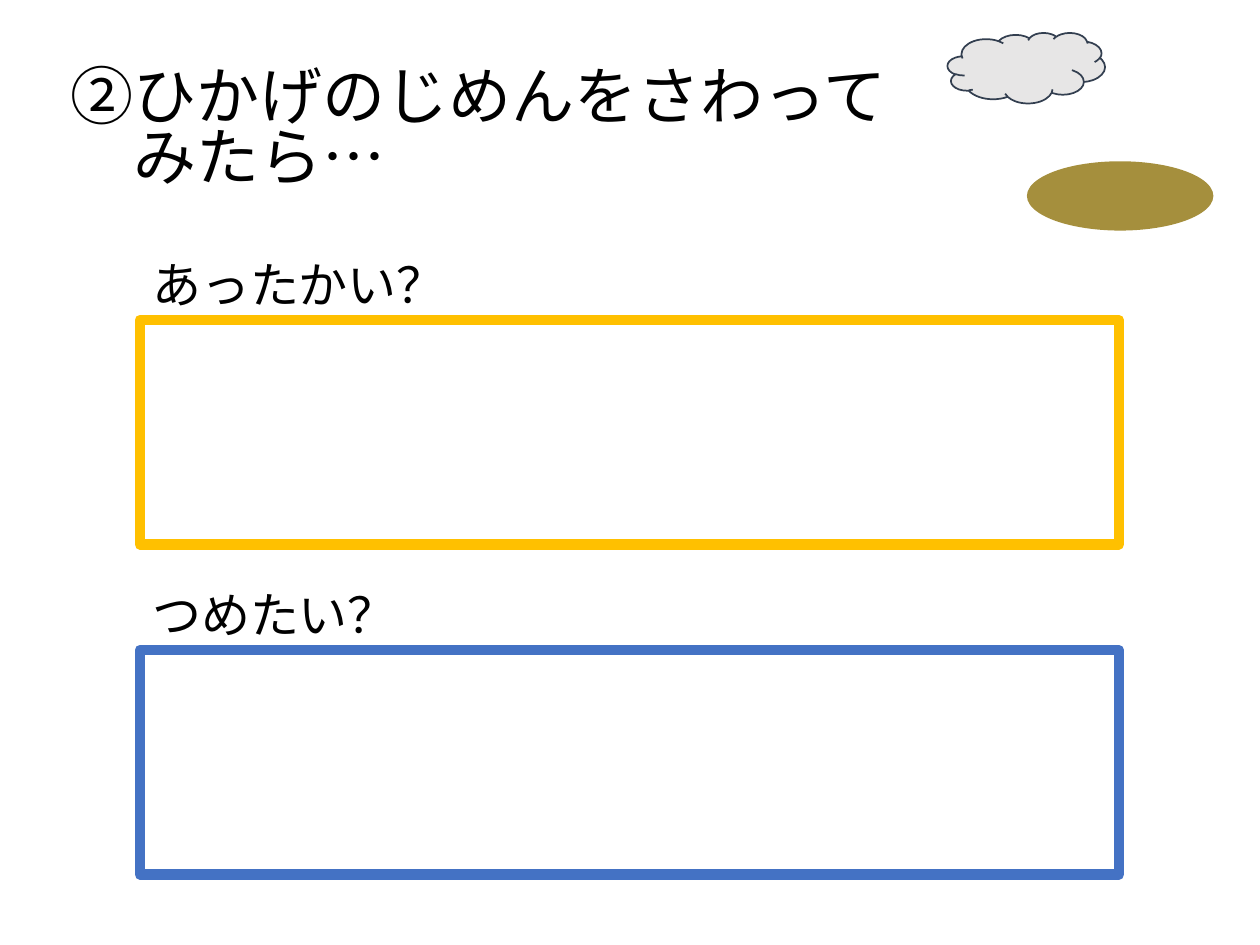
from lxml.etree import SubElement
from pptx import Presentation
from pptx.dml.color import RGBColor
from pptx.enum.shapes import MSO_SHAPE
from pptx.enum.text import MSO_ANCHOR
from pptx.oxml.ns import qn
from pptx.util import Inches, Pt

FONT = "Noto Sans CJK JP"
COLORS = {
    "text": "000000",
    "paper": "FFFFFF",
    "warm": "FFC000",
    "cold": "4472C4",
    "soil": "A58F3D",
    "cloud": "E7E6E6",
    "edge": "333F50",
}


def color(name):
    return RGBColor.from_string(COLORS[name])


def add_form(slide, kind, box, fill, line=None, width=1):
    form = slide.shapes.add_shape(kind, *map(Inches, box))
    form.shadow.inherit = False
    form.fill.solid()
    form.fill.fore_color.rgb = color(fill)
    if line:
        form.line.color.rgb = color(line)
        form.line.width = Pt(width)
    else:
        form.line.fill.background()


def set_font(para, size):
    """Style a paragraph, with the same face for Latin and Japanese."""
    font = para.font
    font.size = Pt(size)
    font.name = FONT
    font.color.rgb = color("text")
    props = para._p.get_or_add_pPr().find(qn("a:defRPr"))
    SubElement(props, qn("a:ea")).set("typeface", FONT)


def add_text(slide, box, lines, size, wrap=False):
    frame = slide.shapes.add_textbox(*map(Inches, box)).text_frame
    frame.word_wrap = wrap
    frame.text = "\n".join(lines)
    for para in frame.paragraphs:
        set_font(para, size)
    return frame


def add_title(slide, lines):
    """Add the heading, its second line set in by one letter."""
    size = 36
    frame = add_text(slide, (0.46, 0.39, 9.08, 1.31), lines, size, True)
    frame.vertical_anchor = MSO_ANCHOR.MIDDLE
    for para in frame.paragraphs:
        para.line_spacing = 0.8
    props = frame.paragraphs[1]._p.get_or_add_pPr()
    props.set("marL", str(Pt(size)))
    props.set("indent", "0")


def add_answer(slide, top, label, width, line):
    """Add a label with an empty frame to write in below it."""
    left, high = 1.11, 0.57
    add_form(slide, MSO_SHAPE.RECTANGLE, (left, top + high, 7.77, 1.78),
             "paper", line, 6)
    add_text(slide, (left, top, width, high), [label], 28)


def main():
    deck = Presentation()
    deck.slide_width, deck.slide_height = Inches(10), Inches(7.5)
    slide = deck.slides.add_slide(deck.slide_layouts[6])
    add_answer(slide, 4.59, "つめたい？", 2.17, "cold")
    add_answer(slide, 1.97, "あったかい？", 2.56, "warm")
    add_title(slide, ["②ひかげのじめんをさわって", "みたら…"])
    add_form(slide, MSO_SHAPE.OVAL, (8.15, 1.28, 1.48, 0.55), "soil")
    add_form(slide, MSO_SHAPE.CLOUD, (7.52, 0.26, 1.25, 0.56),
             "cloud", "edge")
    deck.save("out.pptx")


if __name__ == "__main__":
    main()
